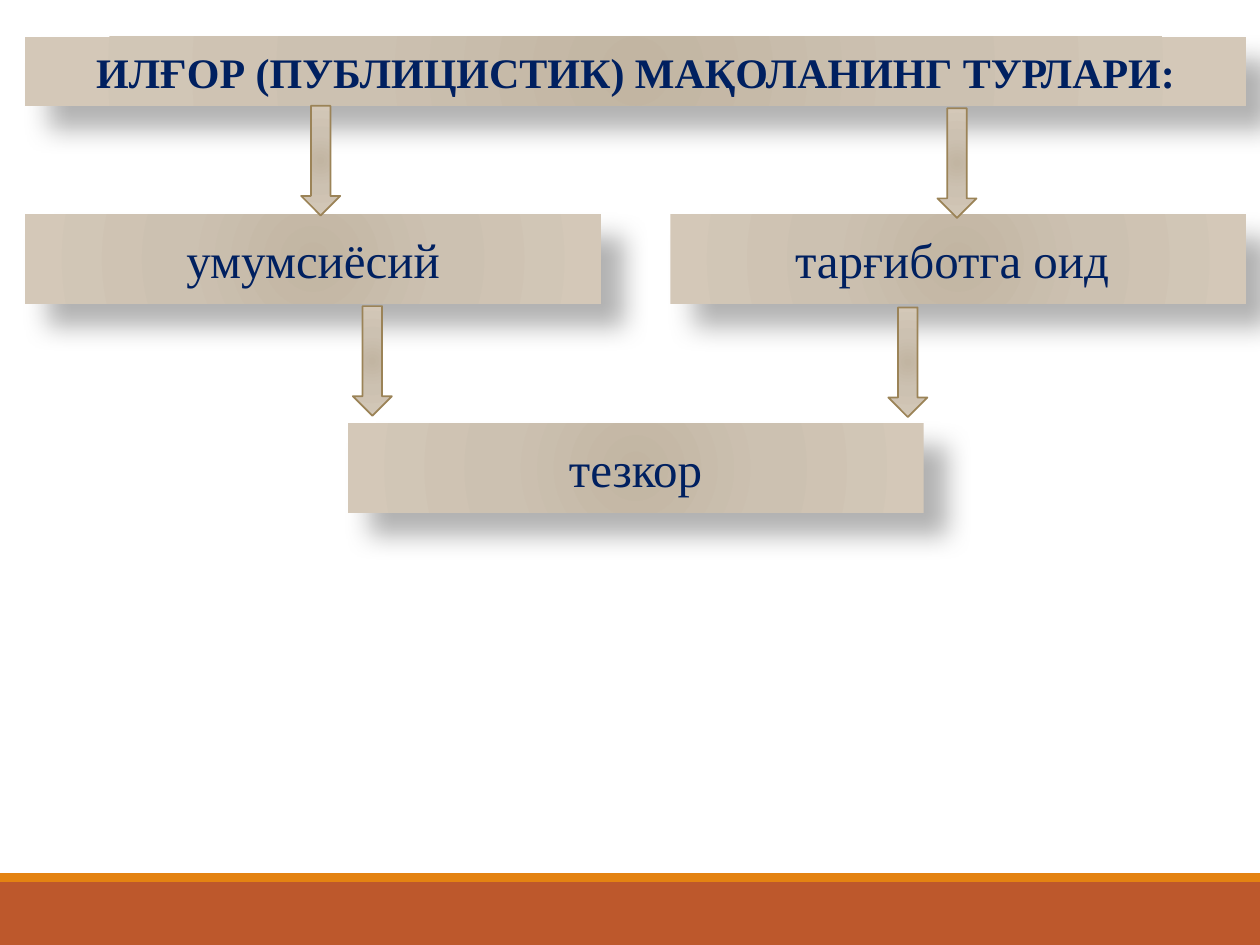
from lxml import etree
from pptx import Presentation
from pptx.dml.color import RGBColor
from pptx.enum.shapes import MSO_SHAPE
from pptx.enum.text import MSO_ANCHOR, PP_ALIGN
from pptx.oxml.ns import qn
from pptx.util import Inches, Pt

RECTANGLE = MSO_SHAPE.RECTANGLE
ROUNDED = MSO_SHAPE.ROUNDED_RECTANGLE
DOWN_ARROW = MSO_SHAPE.DOWN_ARROW
CENTER = PP_ALIGN.CENTER
MIDDLE = MSO_ANCHOR.MIDDLE

SLIDE_WIDTH, SLIDE_HEIGHT = 10, 7.5
FONT = "Times New Roman"
NAVY, BROWN = "002060", "9B8357"
RUST, ORANGE = "BD582C", "E48312"
GRADIENT = [(0, "C2B5A2"), (45, "CCC1B1"), (100, "D4C8B8")]

# Grid: left margin, box size and the tops of the three rows
LEFT = 0.2
HEADER_WIDTH, HEADER_HEIGHT = 9.69, 0.55
BOX_WIDTH, BOX_HEIGHT = 4.57, 0.71
ROWS = [0.29, 1.7, 3.36]
COLUMNS = [LEFT, LEFT + HEADER_WIDTH - BOX_WIDTH]
ARROW_WIDTH, ARROW_HEIGHT = 0.31, 0.87


def color(hex_value):
    return RGBColor.from_string(hex_value)


def add_element(parent, tag, **attributes):
    values = {name: str(value) for name, value in attributes.items()}
    return etree.SubElement(parent, qn(tag), values)


def add_plain_shape(slide, kind, left, top, width, height):
    shape = slide.shapes.add_shape(
        kind, Inches(left), Inches(top), Inches(width), Inches(height))
    shape.shadow.inherit = False
    shape.line.fill.background()
    return shape


def fill_radial(shape):
    shape.fill.background()
    properties = shape.element.spPr
    gradient = add_element(properties, "a:gradFill", rotWithShape=1)
    stops = add_element(gradient, "a:gsLst")
    for position, hex_value in GRADIENT:
        stop = add_element(stops, "a:gs", pos=position * 1000)
        add_element(stop, "a:srgbClr", val=hex_value)
    circle = add_element(gradient, "a:path", path="circle")
    add_element(circle, "a:fillToRect", l=100000, t=100000, r=100000, b=100000)
    properties.replace(properties.find(qn("a:noFill")), gradient)


def add_shadow(shape):
    effects = shape.element.spPr.find(qn("a:effectLst"))
    shadow = add_element(effects, "a:outerShdw", blurRad=Pt(15), dist=Pt(18),
                         dir=45 * 60000, algn="tl", rotWithShape=0)
    black = add_element(shadow, "a:srgbClr", val="000000")
    add_element(black, "a:alpha", val=30000)


def add_bar(slide, top, height, hex_value):
    bar = add_plain_shape(slide, RECTANGLE, 0, top, SLIDE_WIDTH, height)
    bar.fill.solid()
    bar.fill.fore_color.rgb = color(hex_value)


def add_box(slide, text, left, top, width=BOX_WIDTH, height=BOX_HEIGHT,
            size=28, bold=False):
    box = add_plain_shape(slide, ROUNDED, left, top, width, height)
    box.adjustments[0] = 0
    fill_radial(box)
    add_shadow(box)
    box.text_frame.vertical_anchor = MIDDLE
    box.text_frame.word_wrap = True
    paragraph = box.text_frame.paragraphs[0]
    paragraph.text = text
    paragraph.alignment = CENTER
    font = paragraph.font
    font.name, font.size, font.bold = FONT, Pt(size), bold
    font.color.rgb = color(NAVY)


def add_arrow(slide, left, top):
    arrow = add_plain_shape(slide, DOWN_ARROW, left, top,
                            ARROW_WIDTH, ARROW_HEIGHT)
    fill_radial(arrow)
    arrow.line.color.rgb = color(BROWN)
    arrow.line.width = Pt(1)


def main():
    presentation = Presentation()
    presentation.slide_width = Inches(SLIDE_WIDTH)
    presentation.slide_height = Inches(SLIDE_HEIGHT)
    slide = presentation.slides.add_slide(presentation.slide_layouts[6])

    # Footer bars
    add_bar(slide, 7, 0.5, RUST)
    add_bar(slide, 6.93, 0.07, ORANGE)

    # Heading and the three article types
    add_box(slide, "ИЛҒОР (ПУБЛИЦИСТИК) МАҚОЛАНИНГ ТУРЛАРИ:", LEFT, ROWS[0],
            HEADER_WIDTH, HEADER_HEIGHT, size=24, bold=True)
    add_box(slide, "умумсиёсий", COLUMNS[0], ROWS[1])
    add_box(slide, "тарғиботга оид ", COLUMNS[1], ROWS[1])
    add_box(slide, "тезкор", sum(COLUMNS) / 2, ROWS[2])

    # Arrows from each row to the next
    for left, top in [(2.39, 0.84), (2.8, 2.43), (7.05, 2.44), (7.44, 0.86)]:
        add_arrow(slide, left, top)

    presentation.save("out.pptx")


if __name__ == "__main__":
    main()
